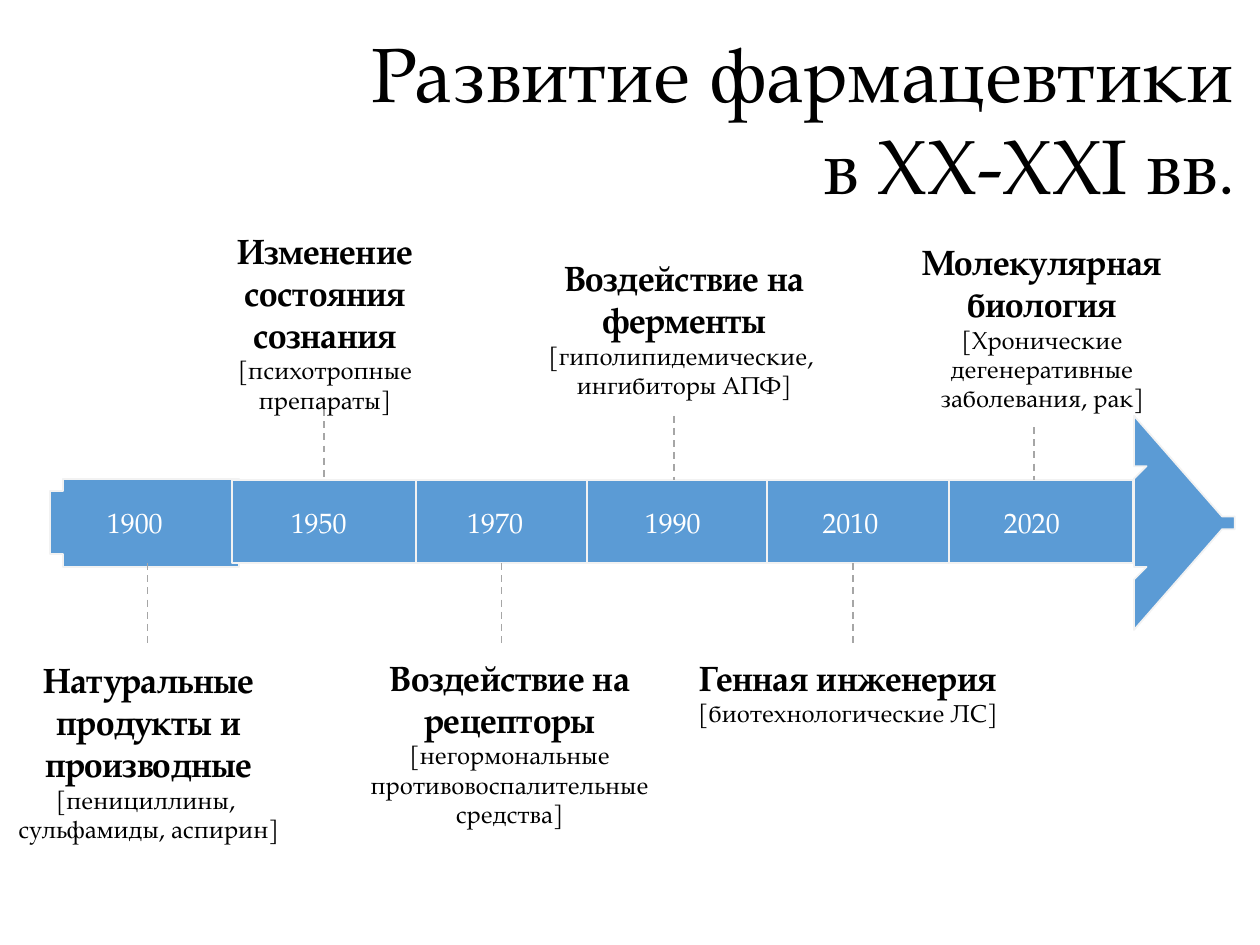
from lxml.etree import SubElement
from pptx import Presentation
from pptx.dml.color import RGBColor
from pptx.enum.dml import MSO_LINE
from pptx.enum.shapes import MSO_CONNECTOR, MSO_SHAPE
from pptx.enum.text import MSO_ANCHOR, PP_ALIGN
from pptx.oxml.ns import qn
from pptx.util import Inches, Pt

COLORS = {name: RGBColor.from_string(value) for name, value in {
    "bar": "5B9BD5", "edge": "F2F2F2", "guide": "A6A6A6",
    "text": "000000", "year": "FFFFFF"}.items()}
FONT = "TeX Gyre Pagella"

deck = Presentation()
deck.slide_width, deck.slide_height = Inches(10), Inches(7.5)
page = deck.slides.add_slide(deck.slide_layouts[5])
UNIT = deck.slide_width / 100  # grid of 100 columns by 75 rows
BAR_TOP, BAR_BOTTOM = 38.1, 44.7
SEGMENT_WIDTH = 14.6


def write_text(box, place, runs, color="text", align=PP_ALIGN.CENTER):
    """Place a box and fill it with (text, size, bold) runs; a newline starts a paragraph."""
    box.left, box.top, box.width, box.height = (round(value * UNIT) for value in place)
    frame = box.text_frame
    frame.word_wrap = True
    frame.vertical_anchor = MSO_ANCHOR.TOP
    para = frame.paragraphs[0]
    para.alignment = align
    for text, size, bold in runs:
        for index, part in enumerate(text.split("\n")):
            if index:
                para = frame.add_paragraph()
                para.alignment = align
            if part:
                span = para.add_run()
                span.text = part
                span.font.name, span.font.size, span.font.bold = FONT, Pt(size), bold
                span.font.color.rgb = COLORS[color]


def add_outline(start, steps):
    """Draw a closed outline; a step is a corner (x, y) or a cubic curve of three points."""
    points = [start]
    for step in steps:
        if len(step) == 2:
            points.append(step)
            continue
        curve = [points[-1], step[:2], step[2:4], step[4:]]
        for t in (0.2, 0.4, 0.6, 0.8, 1):
            weights = ((1 - t) ** 3, 3 * t * (1 - t) ** 2, 3 * t * t * (1 - t), t ** 3)
            points.append(tuple(sum(weight * point[axis] for weight, point in zip(weights, curve))
                                for axis in (0, 1)))
    builder = page.shapes.build_freeform(*points[0], scale=UNIT)
    builder.add_line_segments(points[1:], close=True)
    return builder.convert_to_shape()


title = page.shapes.title
write_text(title, (25.1, 0, 74.9, 17.3),
           [("Развитие фармацевтики в ХХ-ХХI вв", 44, False), (".", 38, False)],
           align=PP_ALIGN.RIGHT)
title_frame = title.text_frame
title_frame.margin_left = title_frame.margin_top = title_frame.margin_right = Inches(0.2)
title_frame.margin_bottom = Inches(0.05)

# Timeline bar: rounded start, square segments and the arrow head
bar_parts = [add_outline((18.9, BAR_TOP), [
    (18.9, BAR_BOTTOM), (5.2, BAR_BOTTOM),
    (4.7, BAR_BOTTOM, 4.4, 44.2, 4.4, 43.6), (4.4, 39.2),
    (4.4, 38.6, 4.7, BAR_TOP, 5.2, BAR_TOP)])]
for left in (32.5, 18.4, 46.6, 60.9, 75.3):
    bar_parts.append(page.shapes.add_shape(
        MSO_SHAPE.RECTANGLE, round(left * UNIT), round(BAR_TOP * UNIT),
        round(SEGMENT_WIDTH * UNIT), round((BAR_BOTTOM - BAR_TOP) * UNIT)))
bar_parts.append(add_outline((97.4, 42), [
    (90.4, 49.5), (90.1, 50, 89.9, 49.9, 89.9, 49.3), (90.1, 48), (90.5, 45.8),
    (90.6, 45.2, 90.3, BAR_BOTTOM, 89.9, BAR_BOTTOM), (89.8, BAR_BOTTOM),
    (89.8, BAR_TOP), (90.3, BAR_TOP, 90.6, 37.6, 90.5, 37), (89.9, 33.5),
    (89.9, 32.9, 90.1, 32.7, 90.4, 33.2), (97.4, 40.8),
    (97.8, 41.1, 97.8, 41.6, 97.4, 42)]))
for part in bar_parts:
    part.shadow.inherit = False
    part.fill.solid()
    part.fill.fore_color.rgb = COLORS["bar"]
    part.line.color.rgb = COLORS["edge"]
    part.line.width = Pt(1)

# Dashed guides from the bar to the labels
for x, top, bottom in ((11.7, BAR_BOTTOM, 51.4), (25.7, 31.5, BAR_TOP),
                       (39.8, BAR_BOTTOM, 51.4), (53.5, 33, BAR_TOP),
                       (67.7, BAR_BOTTOM, 51.4), (82.05, 33.9, BAR_TOP)):
    guide = page.shapes.add_connector(
        MSO_CONNECTOR.STRAIGHT, *(round(value * UNIT) for value in (x, top, x, bottom)))
    guide.line.color.rgb = COLORS["guide"]
    guide.line.width = Pt(1)
    guide.line.dash_style = MSO_LINE.DASH
    SubElement(guide._element.spPr, qn("a:effectLst"))

for year, left in (("1900", 7.5), ("1950", 22.1), ("1970", 36.1),
                   ("1990", 50.2), ("2010", 64.3), ("2020", 78.7)):
    write_text(page.shapes.add_textbox(0, 0, 0, 0), (left, 39.6, 7.3, 3.7),
               [(year, 16, False)], color="year", align=PP_ALIGN.LEFT)

labels = [
    ((0, 51.8, 23.6, 15.8), "Натуральные продукты и производные\n",
     "[пенициллины, \nсульфамиды, аспирин]"),
    ((12.5, 17.7, 26.6, 13.5), "Изменение состояния сознания ", "[психотропные препараты]"),
    ((27.8, 51.6, 25.3, 14.8), "Воздействие на рецепторы ",
     "[негормональные противовоспалительные средства]"),
    ((40.1, 19.9, 28.4, 12.5), "Воздействие на ферменты ",
     "[гиполипидемические, \nингибиторы АПФ]"),
    ((53.1, 51.6, 28.4, 6.7), "Генная инженерия ", "[биотехнологические ЛС]"),
    ((70.1, 18.6, 25.2, 14.8), "Молекулярная биология ",
     "[Хронические дегенеративные заболевания, рак]"),
]
for place, heading, examples in labels:
    write_text(page.shapes.add_textbox(0, 0, 0, 0), place,
               [(heading, 20, True), (examples, 14, False)])

deck.save("out.pptx")
